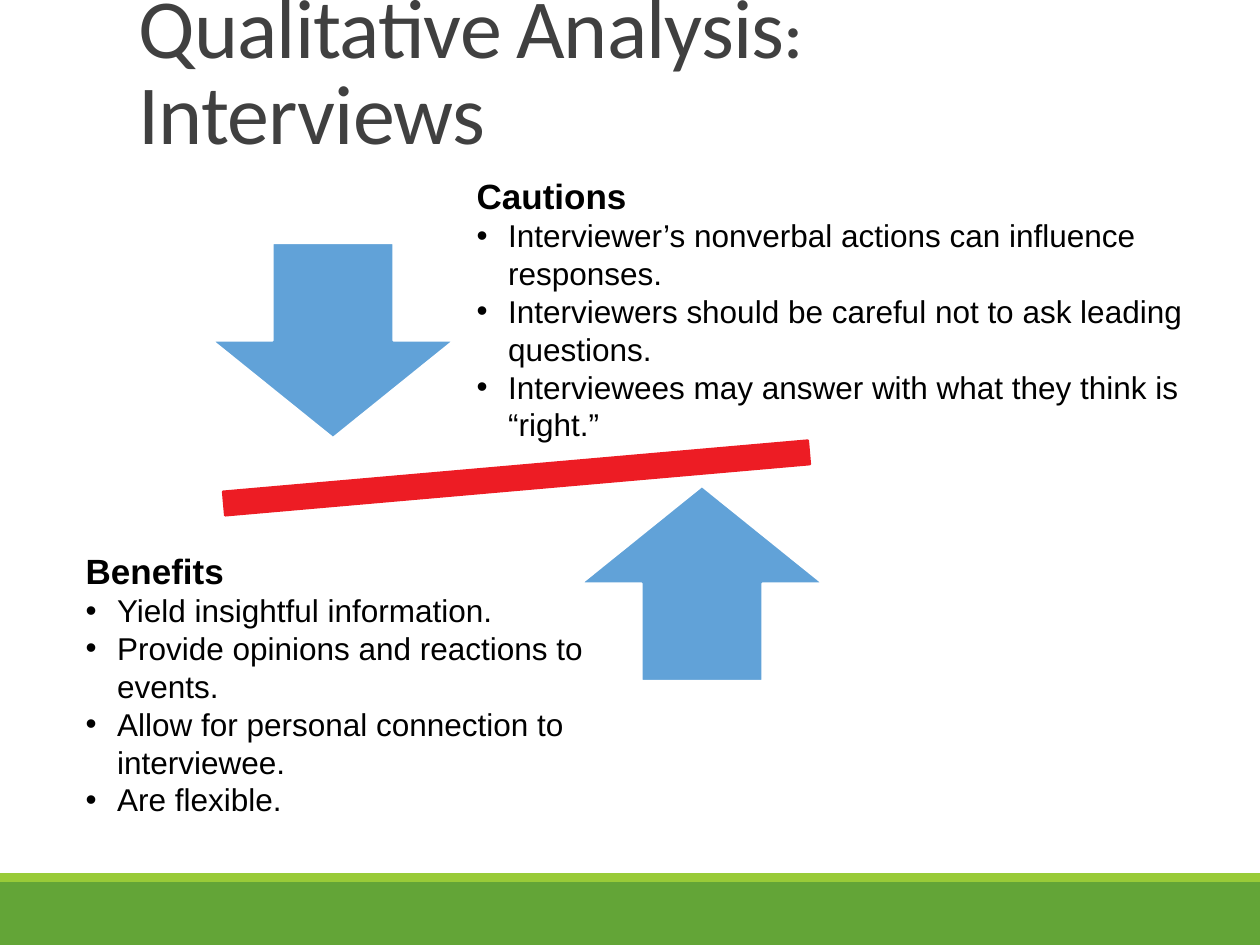
from pptx import Presentation
from pptx.dml.color import RGBColor
from pptx.enum.shapes import MSO_SHAPE as Shape
from pptx.enum.text import MSO_ANCHOR as Anchor, MSO_AUTO_SIZE as AutoSize
from pptx.oxml.ns import qn
from pptx.util import Emu, Pt

PX = 914400 / 126
THEME = {
    "title": {"name": "Calibri", "size": Pt(48), "bold": False, "color": "404040"},
    "title_gap": {"name": "Calibri", "size": Pt(36), "bold": True, "color": "404040"},
    "heading": {"name": "Arial", "size": Pt(20), "bold": True, "color": "000000"},
    "item": {"name": "Arial", "size": Pt(18), "bold": False, "color": "000000"},
    "band": "63A537", "stripe": "99CB38",
    "beam": "ED1C24", "arrow": "61A2D8", "arrow_edge": "FFFFFF",
}

TITLE_AREA = (126, 42, 1029, 126)
TITLE = [("Qualitative", "title"), (" ", "title_gap"), ("Analysis", "title"),
         (": ", "title_gap"), ("Interviews", "title")]

LISTS = [
    ("Benefits", (73, 543, 534, 282), [
        "Yield insightful information.",
        "Provide opinions and reactions to events.",
        "Allow for personal connection to interviewee.",
        "Are flexible.",
    ]),
    ("Cautions", (464, 168, 753, 282), [
        "Interviewer’s nonverbal actions can influence responses.",
        "Interviewers should be careful not to ask leading questions.",
        "Interviewees may answer with what they think is “right.”",
    ]),
]

# preset, area, fill, edge, rotation
SHAPES = [
    (Shape.RECTANGLE, (0, 882, 1260, 63), "band", None, 0),
    (Shape.RECTANGLE, (0, 873, 1260, 9), "stripe", None, 0),
    (Shape.MATH_MINUS, (117, 427, 799, 102), "beam", "beam", 355),
    (Shape.DOWN_ARROW, (212, 243, 242, 195), "arrow", "arrow_edge", 0),
    (Shape.UP_ARROW, (581, 486, 242, 195), "arrow", "arrow_edge", 0),
]


def px(value):
    return Emu(round(value * PX))


def place(box, area):
    for side, value in zip(("left", "top", "width", "height"), area):
        setattr(box, side, px(value))


def format_font(font, style):
    for name, value in THEME[style].items():
        if name == "color":
            font.color.rgb = RGBColor.from_string(value)
        else:
            setattr(font, name, value)


def add_figure(page, preset, area, fill, edge, rotation):
    shape = page.shapes.add_shape(preset, *map(px, area))
    shape.shadow.inherit = False
    shape.rotation = rotation
    shape.fill.solid()
    shape.fill.fore_color.rgb = RGBColor.from_string(THEME[fill])
    if edge:
        shape.line.color.rgb = RGBColor.from_string(THEME[edge])
        shape.line.width = Pt(1.25)
    else:
        shape.line.fill.background()


def fill_title(box):
    place(box, TITLE_AREA)
    frame = box.text_frame
    frame.auto_size = AutoSize.NONE
    frame.vertical_anchor = Anchor.BOTTOM
    para = frame.paragraphs[0]
    para.line_spacing = 0.85
    para.alignment = 1
    for text, style in TITLE:
        span = para.add_run()
        span.text = text
        format_font(span.font, style)
        span.font._element.set("spc", "-50")


def add_bullet(para, mark):
    """Set a hanging indent, with a bullet when mark is given."""
    props = para._p.get_or_add_pPr()
    props.set("marL", str(px(31.5)))
    props.set("indent", str(-px(31.5)))
    if mark:
        props.makeelement(qn("a:buChar"))
        bullet = props.makeelement(qn("a:buChar"), {"char": mark})
    else:
        bullet = props.makeelement(qn("a:buNone"))
    props.append(bullet)


def fill_list(box, heading, area, items):
    place(box, area)
    frame = box.text_frame
    frame.auto_size = AutoSize.NONE
    for index, text in enumerate([heading, *items]):
        para = frame.add_paragraph() if index else frame.paragraphs[0]
        para.space_before = Pt(0)
        add_bullet(para, "•" if index else None)
        span = para.add_run()
        span.text = text
        format_font(span.font, "item" if index else "heading")


def main():
    deck = Presentation()
    deck.slide_width, deck.slide_height = px(1260), px(945)
    page = deck.slides.add_slide(deck.slide_layouts.get_by_name("Two Content"))
    title, *bodies = page.placeholders
    fill_title(title)
    for figure in SHAPES:
        add_figure(page, *figure)
    for body, content in zip(bodies, LISTS):
        fill_list(body, *content)
    deck.save("out.pptx")


if __name__ == "__main__":
    main()
